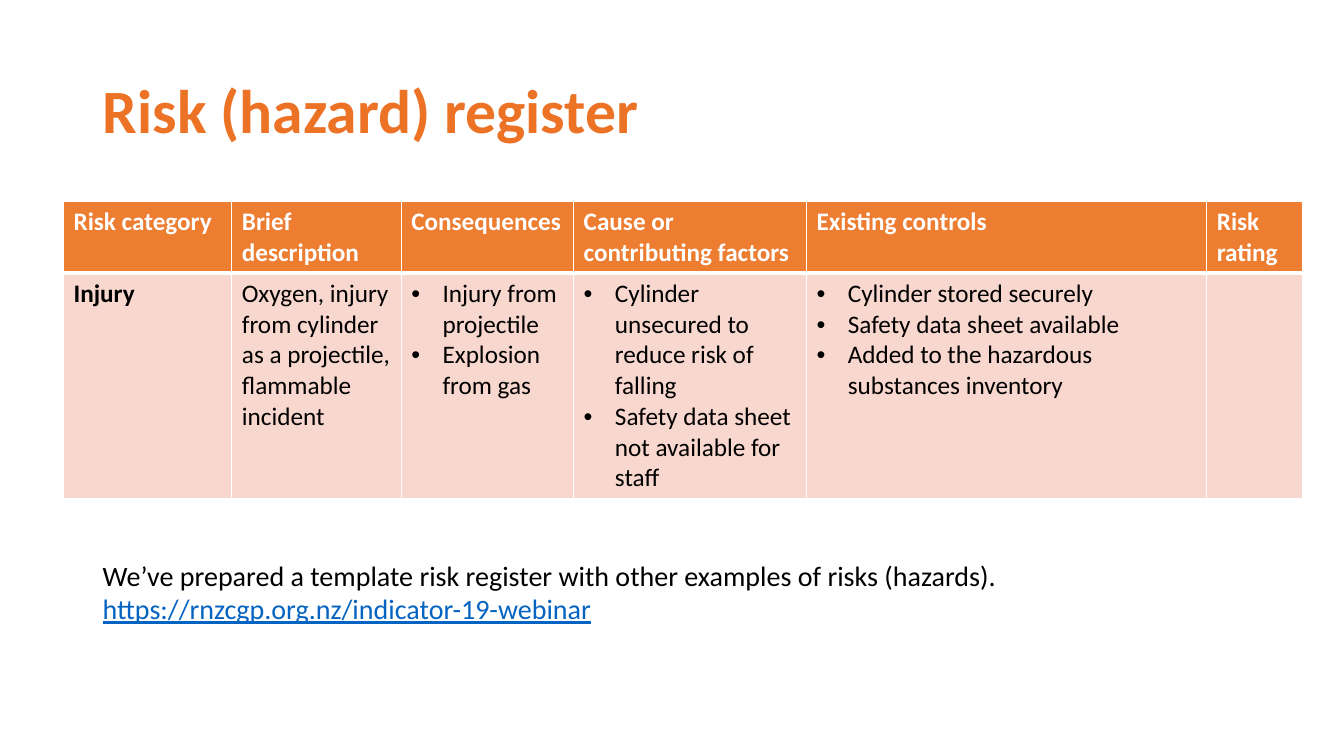
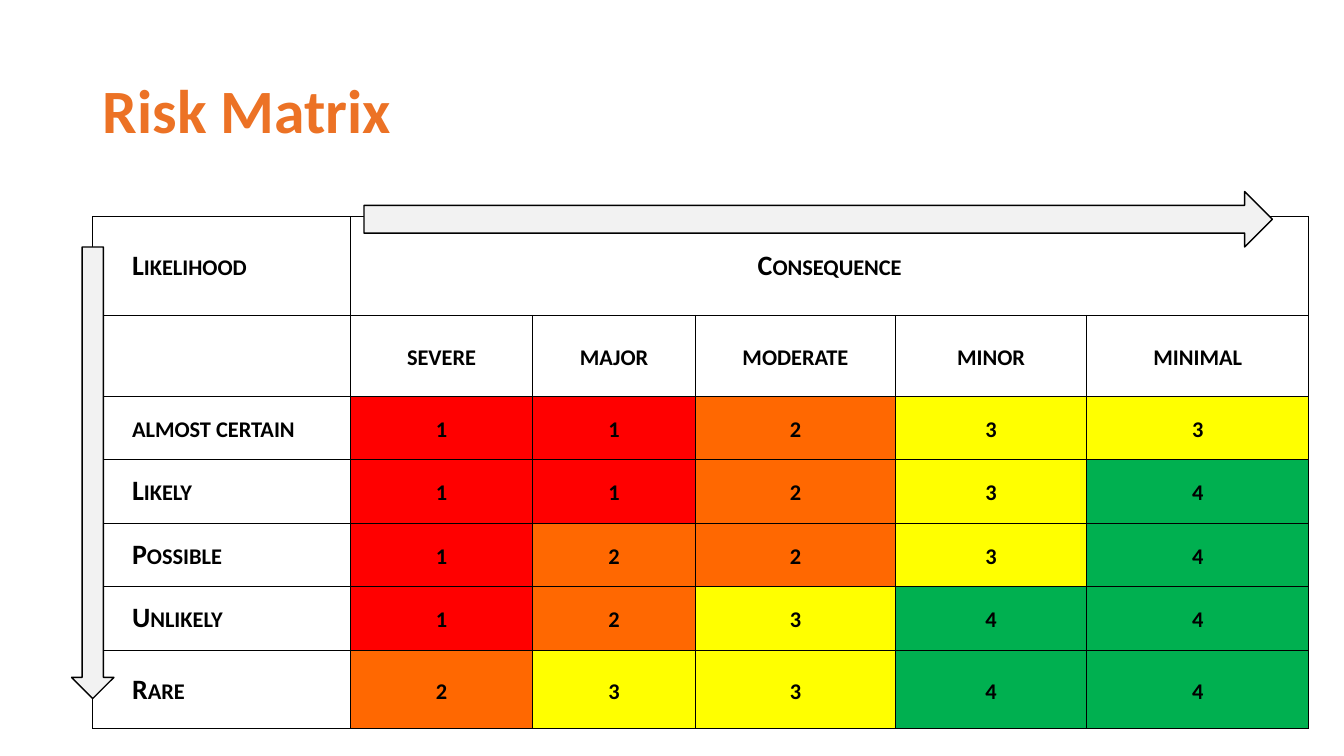
from lxml.etree import SubElement
from pptx import Presentation
from pptx.dml.color import RGBColor
from pptx.enum.shapes import MSO_SHAPE
from pptx.enum.text import MSO_ANCHOR, MSO_AUTO_SIZE, PP_ALIGN
from pptx.oxml.ns import qn
from pptx.util import Inches, Pt

FONT = "Calibri"
TITLE_ORANGE = RGBColor(0xEC, 0x72, 0x25)
HEADER_ORANGE = RGBColor(0xED, 0x7D, 0x31)
PALE_ORANGE = RGBColor(0xF8, 0xD7, 0xCE)
ARROW_GREY = RGBColor(0xF2, 0xF2, 0xF2)
LINK_BLUE = RGBColor(0x05, 0x63, 0xC1)
BLACK = RGBColor(0, 0, 0)
WHITE = RGBColor(0xFF, 0xFF, 0xFF)
RATING_FILLS = {
    "1": RGBColor(0xFF, 0, 0),
    "2": RGBColor(0xFF, 0x68, 0x01),
    "3": RGBColor(0xFF, 0xFF, 0),
    "4": RGBColor(0, 0xB0, 0x50),
}

TITLE_FONT = {"name": FONT, "size": Pt(44), "bold": True}
HEADER_FONT = {"name": FONT, "size": Pt(18), "bold": True}
BODY_FONT = {"name": FONT, "size": Pt(18), "bold": False}
NOTE_FONT = {"name": FONT, "size": Pt(20)}
LINK_FONT = {**NOTE_FONT, "underline": True}
MATRIX_FONT = {"name": FONT, "size": Pt(20), "bold": True}

REGISTER_COLS = [1.67, 1.68, 1.71, 2.31, 3.97, 0.95]
REGISTER_ROWS = [0.7, 2.2]
REGISTER_HEADERS = ["Risk category", "Brief description", "Consequences",
                    "Cause or contributing factors", "Existing controls", "Risk rating"]
REGISTER_ENTRY = [
    "Injury",
    "Oxygen, injury from cylinder as a projectile, flammable incident",
    ["Injury from projectile", "Explosion from gas"],
    ["Cylinder unsecured to reduce risk of falling",
     "Safety data sheet not available for staff"],
    ["Cylinder stored securely", "Safety data sheet available",
     "Added to the hazardous substances inventory"],
    "",
]

MATRIX_COLS = [2.56, 1.8, 1.62, 1.98, 1.9, 2.2]
MATRIX_ROWS = [0.98, 0.8] + [0.63] * 4 + [0.78]
MATRIX = [
    ["Likelihood", "Consequence", "", "", "", ""],
    ["", "severe", "major", "moderate", "minor", "minimal"],
    ["almost certain", *"11233"],
    ["Likely", *"11234"],
    ["Possible", *"12234"],
    ["Unlikely", *"12344"],
    ["Rare", *"23344"],
]


def set_attrs(obj, values):
    for name, value in values.items():
        setattr(obj, name, value)


def add_run(p, text, font, color):
    r = p.add_run()
    r.text = text
    set_attrs(r.font, font)
    r.font.color.rgb = color
    return r


def add_bullet(p):
    pPr = p._p.get_or_add_pPr()
    indent = Inches(0.31)
    pPr.set("marL", str(indent))
    pPr.set("indent", str(-indent))
    SubElement(pPr, qn("a:buFont"), typeface="Arial")
    SubElement(pPr, qn("a:buChar"), char="•")


def add_titled_slide(prs, title):
    s = prs.slides.add_slide(prs.slide_layouts[5])
    sp = s.shapes.title
    set_attrs(sp, {"left": Inches(0.92), "top": Inches(0.4),
                   "width": Inches(11.5), "height": Inches(1.45)})
    tf = sp.text_frame
    set_attrs(tf, {"vertical_anchor": MSO_ANCHOR.MIDDLE, "word_wrap": True,
                   "auto_size": MSO_AUTO_SIZE.NONE})
    p = tf.paragraphs[0]
    set_attrs(p, {"alignment": PP_ALIGN.LEFT, "line_spacing": 0.9})
    add_run(p, title, TITLE_FONT, TITLE_ORANGE)
    return s


def add_grid(s, left, top, cols, rows):
    """Add an unbanded table with the given column widths and row heights."""
    table = s.shapes.add_table(len(rows), len(cols), Inches(left), Inches(top),
                               Inches(sum(cols)), Inches(sum(rows))).table
    set_attrs(table, {"first_row": False, "horz_banding": False})
    for col, width in zip(table.columns, cols):
        col.width = Inches(width)
    for row, height in zip(table.rows, rows):
        row.height = Inches(height)
    return table


def style_cell(cell, fill, border, bottom=1):
    """Draw the borders (widths in points) and then the fill."""
    tcPr = cell._tc.get_or_add_tcPr()
    for side, width in (("L", 1), ("R", 1), ("T", 1), ("B", bottom)):
        ln = SubElement(tcPr, qn(f"a:ln{side}"), w=str(Pt(width)))
        solid = SubElement(ln, qn("a:solidFill"))
        SubElement(solid, qn("a:srgbClr"), val=str(border))
    cell.fill.solid()
    cell.fill.fore_color.rgb = fill


def add_register(s):
    table = add_grid(s, 0.63, 2, REGISTER_COLS, REGISTER_ROWS)
    for c, (header, entry) in enumerate(zip(REGISTER_HEADERS, REGISTER_ENTRY)):
        cell = table.cell(0, c)
        style_cell(cell, HEADER_ORANGE, WHITE, bottom=3)
        add_run(cell.text_frame.paragraphs[0], header, HEADER_FONT, WHITE)

        cell = table.cell(1, c)
        style_cell(cell, PALE_ORANGE, WHITE)
        tf = cell.text_frame
        bulleted = isinstance(entry, list)
        for i, text in enumerate(entry if bulleted else [entry]):
            p = tf.add_paragraph() if i else tf.paragraphs[0]
            if bulleted:
                add_bullet(p)
            if text:
                add_run(p, text, BODY_FONT if c else HEADER_FONT, BLACK)


def add_template_note(s):
    tf = s.shapes.add_textbox(Inches(0.92), Inches(5.49), Inches(9.4), Inches(0.77)).text_frame
    tf.word_wrap = False
    add_run(tf.paragraphs[0],
            "We’ve prepared a template risk register with other examples of risks (hazards).",
            NOTE_FONT, BLACK)
    add_run(tf.add_paragraph(), "https://rnzcgp.org.nz/indicator-19-webinar",
            LINK_FONT, LINK_BLUE)


def add_matrix(s):
    table = add_grid(s, 0.92, 2.15, MATRIX_COLS, MATRIX_ROWS)
    table.cell(0, 1).merge(table.cell(0, 5))
    for r, row in enumerate(MATRIX):
        for c, text in enumerate(row):
            cell = table.cell(r, c)
            style_cell(cell, RATING_FILLS.get(text, WHITE), BLACK)
            cell.vertical_anchor = MSO_ANCHOR.MIDDLE
            p = cell.text_frame.paragraphs[0]
            if c:
                p.alignment = PP_ALIGN.CENTER
            else:
                cell.margin_left = Inches(0.39)
            if text:
                run = add_run(p, text, MATRIX_FONT, BLACK)
                run._r.get_or_add_rPr().set("cap", "small")


def add_arrow(s, shape, left, top, width, height):
    sp = s.shapes.add_shape(shape, Inches(left), Inches(top), Inches(width), Inches(height))
    sp.shadow.inherit = False
    sp.fill.solid()
    sp.fill.fore_color.rgb = ARROW_GREY
    sp.line.color.rgb = BLACK
    sp.line.width = Pt(1)


def main():
    prs = Presentation()
    set_attrs(prs, {"slide_width": Inches(13.33), "slide_height": Inches(7.5)})

    s = add_titled_slide(prs, "Risk (hazard) register")
    add_register(s)
    add_template_note(s)

    s = add_titled_slide(prs, "Risk Matrix")
    add_matrix(s)
    add_arrow(s, MSO_SHAPE.RIGHT_ARROW, 3.61, 1.9, 9.01, 0.55)
    add_arrow(s, MSO_SHAPE.DOWN_ARROW, 0.71, 2.45, 0.42, 4.48)

    prs.save("out.pptx")


if __name__ == "__main__":
    main()
